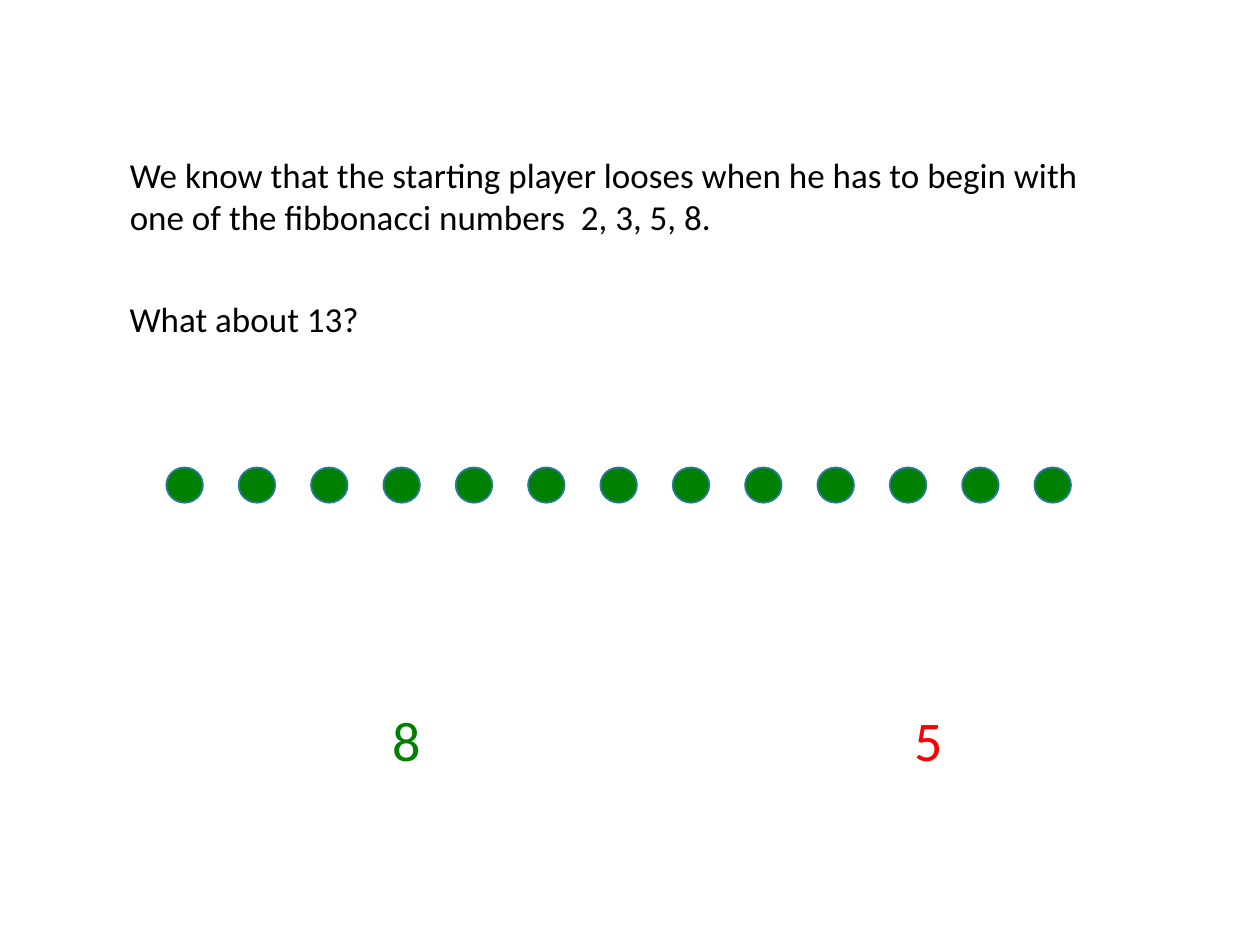
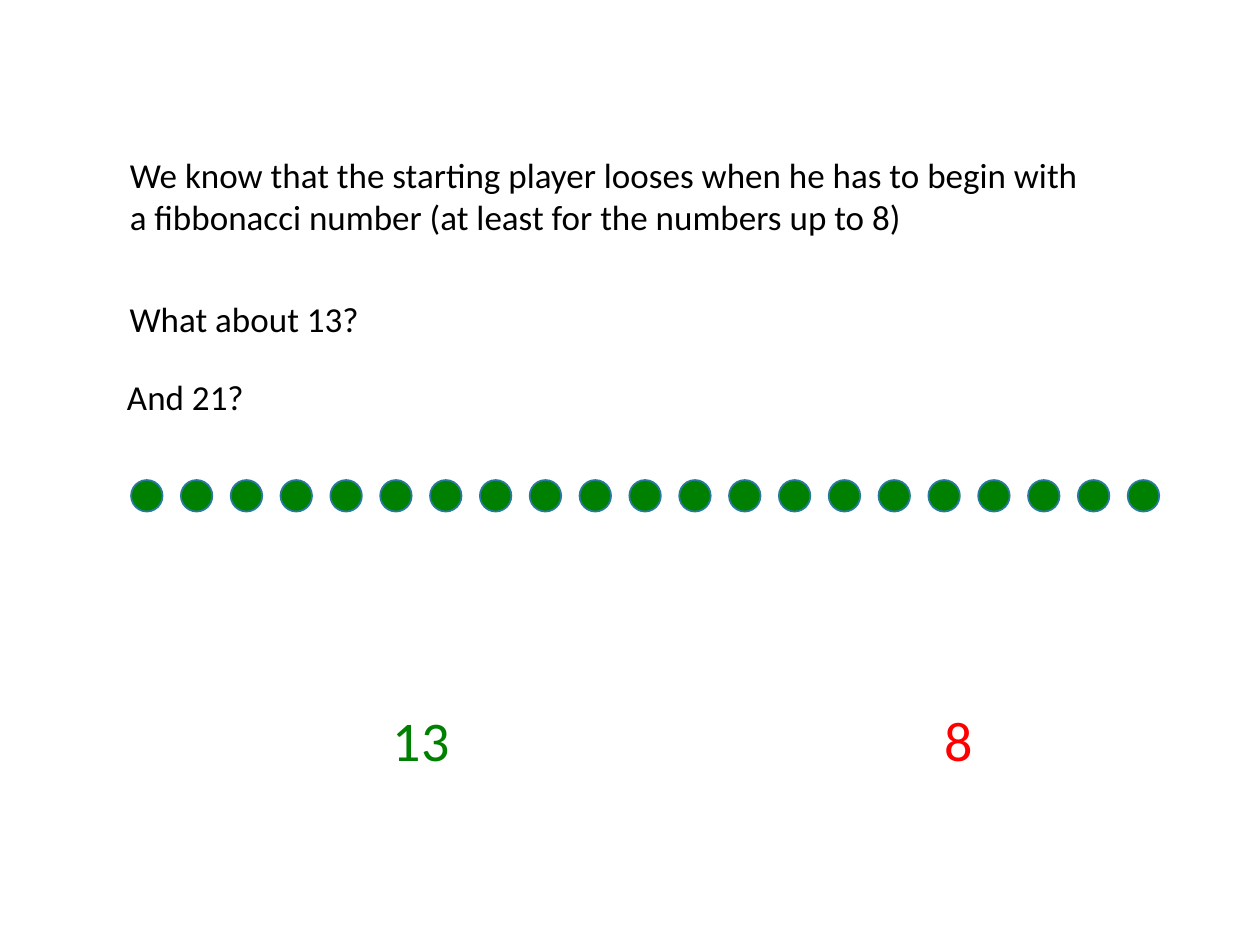
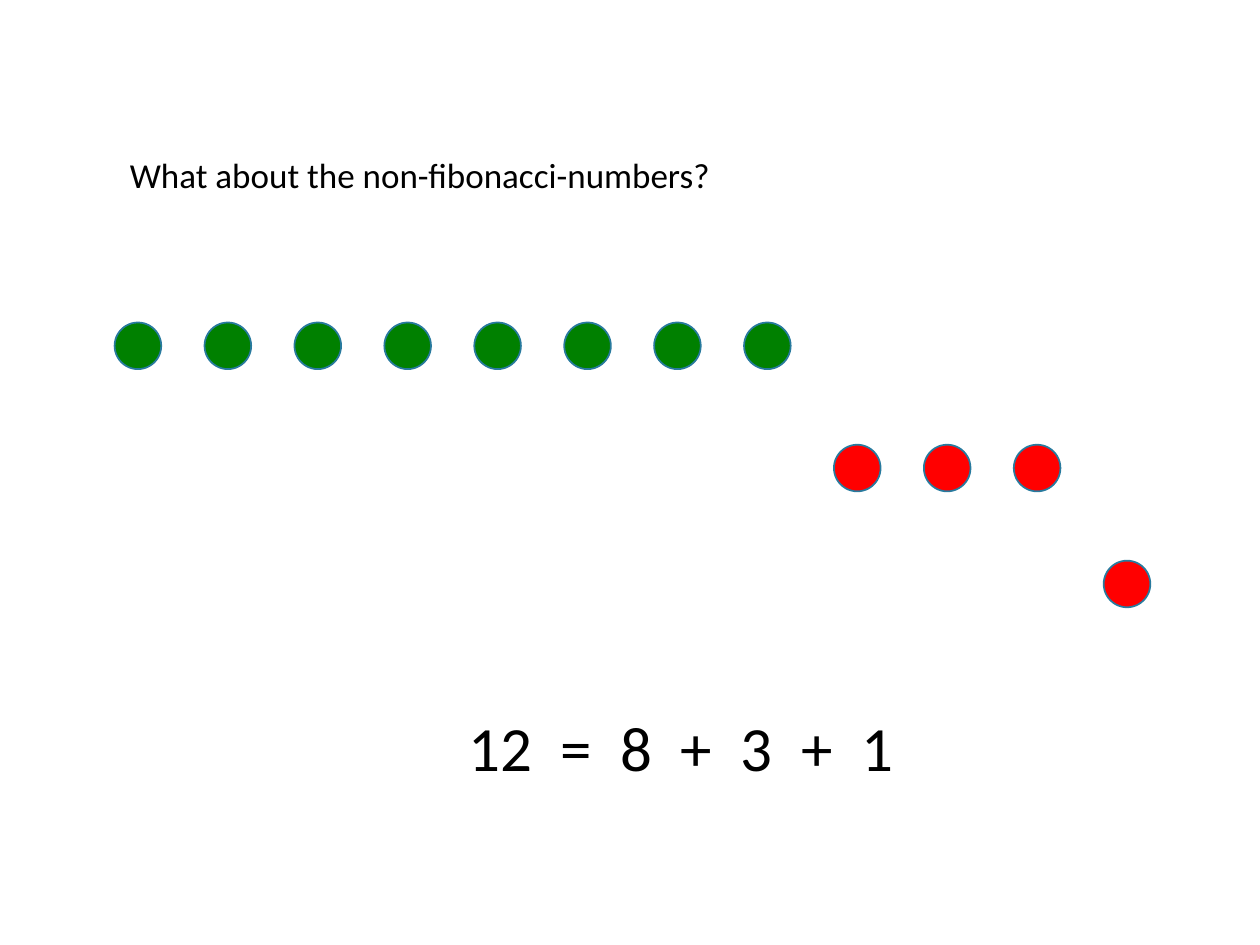
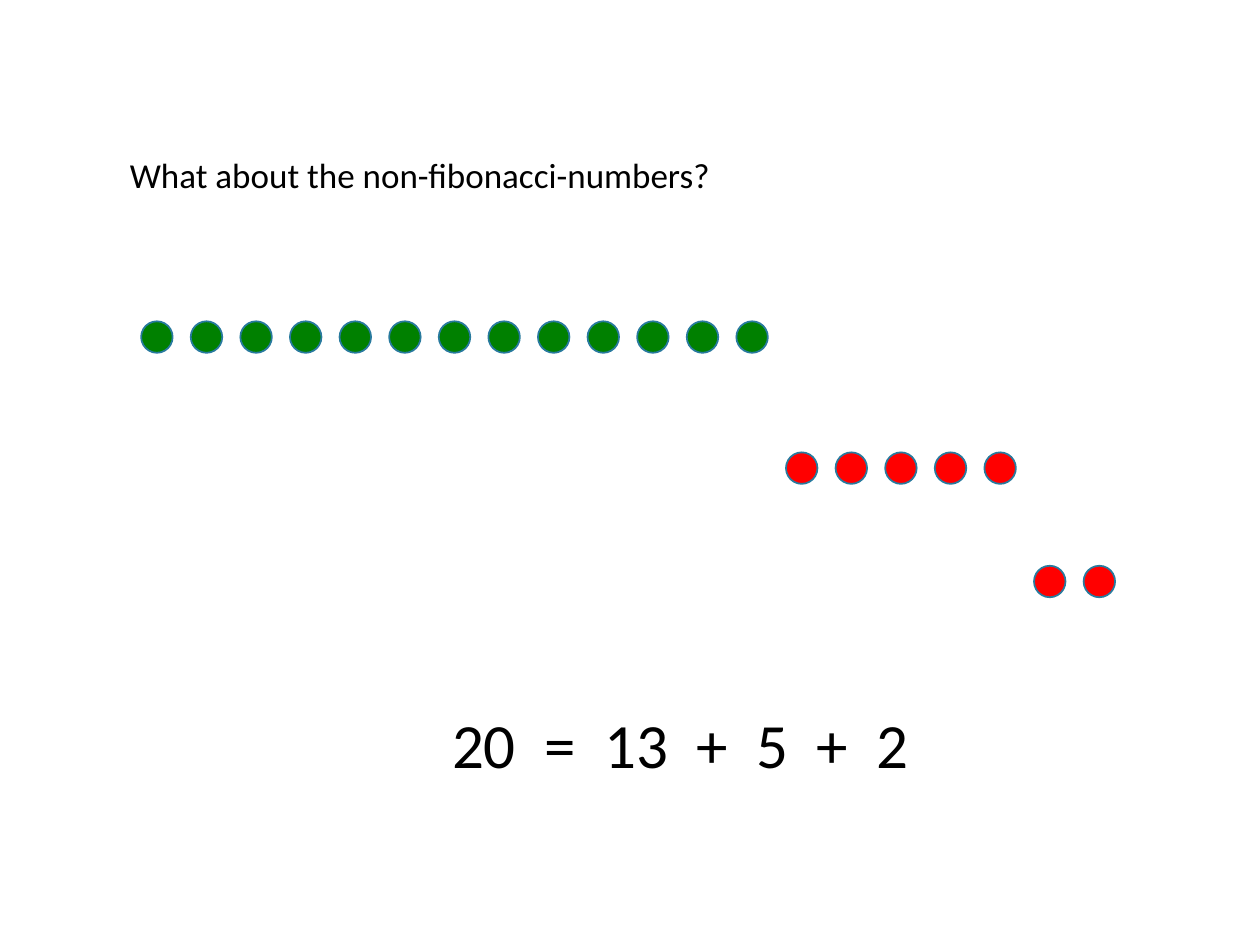
from pptx import Presentation
from pptx import util as u
from pptx.dml import color
from pptx.enum import shapes, text

COLUMNS, ROWS = 100, 75
BLACK, GREEN, RED, OUTLINE = "000000", "008000", "FF0000", "287A9E"


def rgb(hex_string):
    return color.RGBColor.from_string(hex_string)


def write(shape, words, size=20, fill=BLACK, font="Calibri", wrap=True):
    frame = shape.text_frame
    frame.word_wrap = wrap
    frame.auto_size = text.MSO_AUTO_SIZE.SHAPE_TO_FIT_TEXT
    frame.vertical_anchor = text.MSO_ANCHOR.TOP
    paragraph = frame.paragraphs[0]
    paragraph.alignment = text.PP_ALIGN.LEFT
    run = paragraph.add_run()
    run.text = words
    run.font.name = font
    run.font.size = u.Pt(size)
    run.font.color.rgb = rgb(fill)


class Deck:
    def __init__(self):
        self.presentation = Presentation()
        self.presentation.slide_width = u.Inches(10)
        self.presentation.slide_height = u.Inches(7.5)
        self.slide = None

    def area(self, left, top, width, height):
        column = self.presentation.slide_width / COLUMNS
        row = self.presentation.slide_height / ROWS
        return [round(length) for length in
                (left * column, top * row, width * column, height * row)]

    def new_slide(self, statement, width, height):
        self.slide = self.presentation.slides.add_slide(
            self.presentation.slide_layouts[5])
        title = self.slide.shapes.title
        title.left, title.top, title.width, title.height = self.area(
            9.3, 11.7, width, height)
        write(title, statement)

    def label(self, words, left, top, width, height, **style):
        box = self.slide.shapes.add_textbox(*self.area(left, top, width, height))
        write(box, words, **style)

    def counter(self, left, top, width, height, fill):
        shape = self.slide.shapes.add_shape(
            shapes.MSO_SHAPE.OVAL, *self.area(left, top, width, height))
        shape.shadow.inherit = False
        shape.fill.solid()
        shape.fill.fore_color.rgb = rgb(fill)
        shape.line.color.rgb = rgb(OUTLINE)
        shape.line.width = u.Pt(1)

    def counters(self, groups, first, last, width, height):
        tops = [(top, fill) for count, top, fill in groups for _ in range(count)]
        step = (last - first) / (len(tops) - 1)
        for index, (top, fill) in enumerate(tops):
            self.counter(first + index * step, top, width, height, fill)

    def question(self, words, left, top):
        self.label(words, left, top, 21.3, 4.4)

    def number(self, words, left, width, fill):
        self.label(words, left, 55.5, width, 6.4, size=32, fill=fill)

    def equation(self, words, left, top, width):
        self.label(words, left, top, width, 7.1, size=36, wrap=False)


def main():
    deck = Deck()
    opening = "We know that the starting player looses when he has to begin with "
    others = "What about the non-fibonacci-numbers?"

    deck.new_slide(opening + "one of the fibbonacci numbers  2, 3, 5, 8.", 79.1, 7.7)
    deck.question("What about 13?", 9.3, 23.1)
    deck.counters([(13, 37.1, GREEN)], 13.2, 82.1, 2.9, 2.8)
    deck.number("5", 71.6, 4, RED)
    deck.number("8", 30.2, 4, GREEN)

    deck.new_slide(
        opening + "a fibbonacci number (at least for the numbers up to 8)", 79.1, 7.7)
    deck.question("What about 13?", 9.3, 23.1)
    deck.question("And 21?", 9.1, 29.3)
    deck.counters([(21, 38.1, GREEN)], 10.4, 89.5, 2.5, 2.5)
    deck.number("8", 74, 4, RED)
    deck.number("13", 30.2, 7.8, GREEN)

    deck.new_slide(others, 49.7, 4.4)
    deck.counters([(8, 25.6, GREEN), (3, 35.3, RED), (1, 44.5, RED)],
                  9.1, 87.6, 3.7, 3.7)
    deck.equation("12  =  8  +  3  +  1", 36.2, 55.7, 36.1)

    deck.new_slide(others, 49.7, 4.4)
    deck.counters([(13, 25.5, GREEN), (5, 35.9, RED), (2, 44.9, RED)],
                  11.2, 86, 2.5, 2.5)
    deck.equation("20  =  13  +  5  +  2", 34.9, 55.5, 38.6)

    deck.presentation.save("out.pptx")


if __name__ == "__main__":
    main()
